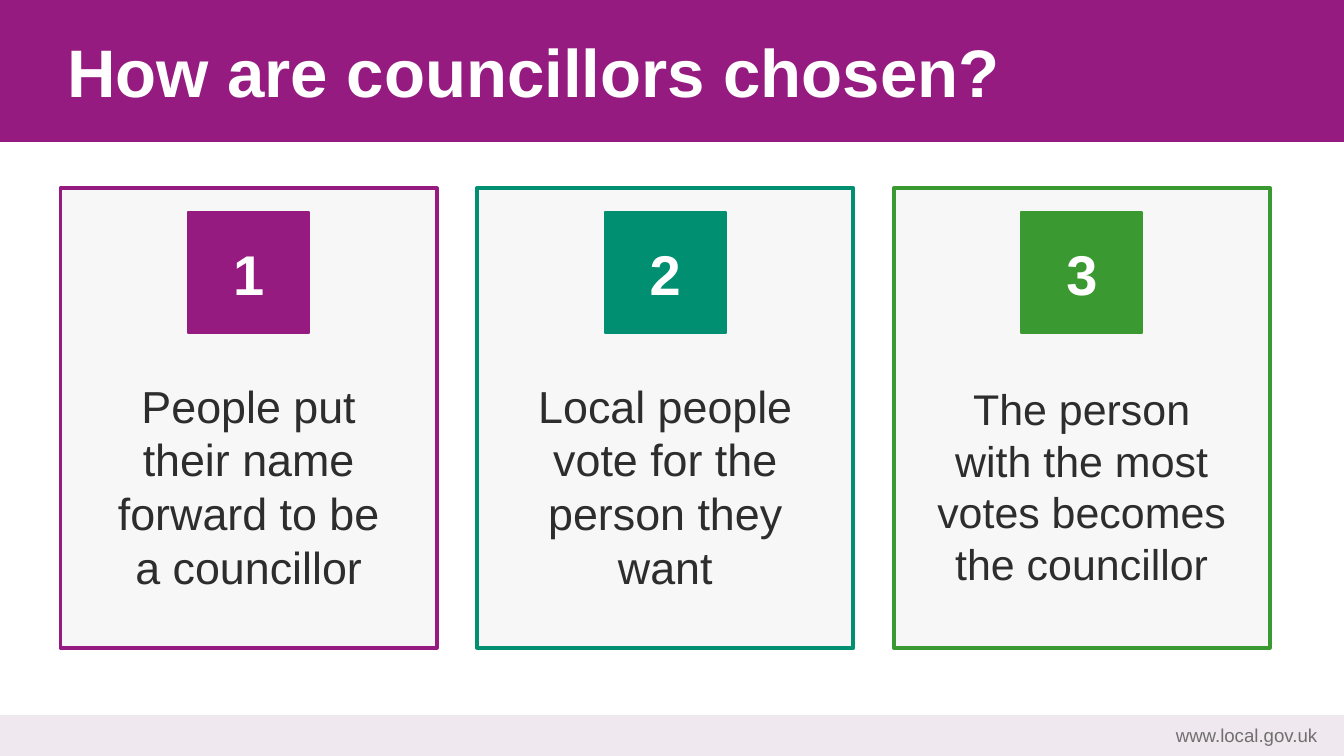
from pptx import Presentation
from pptx.dml.color import RGBColor
from pptx.enum.shapes import MSO_SHAPE
from pptx.enum.text import MSO_ANCHOR, PP_ALIGN
from pptx.util import Inches, Pt

RECTANGLE = MSO_SHAPE.RECTANGLE
MIDDLE = MSO_ANCHOR.MIDDLE
LEFT, CENTER, RIGHT = PP_ALIGN.LEFT, PP_ALIGN.CENTER, PP_ALIGN.RIGHT

FONT = "Arial"
COLORS = {
    "purple": "951B81",
    "teal": "008F70",
    "green": "3A9930",
    "card": "F7F7F7",
    "footer": "F0E8EF",
    "white": "FFFFFF",
    "body": "2D2D2D",
    "muted": "706F6F",
}

# Accent colour, text and text size of each step
STEPS = [
    ("purple", "People put their name forward to be a councillor", 24),
    ("teal", "Local people vote for the person they want", 24),
    ("green", "The person with the most votes becomes the councillor", 23),
]
CARD_LEFT, CARD_TOP, CARD_WIDTH, CARD_HEIGHT = 0.45, 1.4, 2.8, 3.42
CARD_GAP = 0.3
BADGE_TOP, BADGE_SIZE = 1.58, 0.9
TEXT_TOP, TEXT_HEIGHT, TEXT_MARGIN = 2.65, 1.93, 0.2


def color(name):
    return RGBColor.from_string(COLORS[name])


class SlideBuilder:
    """Draws styled elements on one slide; boxes are (left, top, width, height) in inches."""

    def __init__(self, slide):
        self.slide = slide

    def rectangle(self, box, fill, line=None, line_width=1):
        shape = self.slide.shapes.add_shape(RECTANGLE, *map(Inches, box))
        shape.shadow.inherit = False
        shape.fill.solid()
        shape.fill.fore_color.rgb = color(fill)
        shape.line.color.rgb = color(line or fill)
        shape.line.width = Pt(line_width)

    def text(self, box, text, size, text_color, align=LEFT, bold=False, insets=(0, 0)):
        """Add a text box; insets are the side and the top/bottom margins."""
        frame = self.slide.shapes.add_textbox(*map(Inches, box)).text_frame
        frame.word_wrap = True
        frame.vertical_anchor = MIDDLE
        frame.margin_left = frame.margin_right = Inches(insets[0])
        frame.margin_top = frame.margin_bottom = Inches(insets[1])
        paragraph = frame.paragraphs[0]
        paragraph.alignment = align
        run = paragraph.add_run()
        run.text = text
        run.font.name = FONT
        run.font.size = Pt(size)
        run.font.bold = bold
        run.font.color.rgb = color(text_color)

    def step_card(self, left, number, accent, text, size):
        self.rectangle((left, CARD_TOP, CARD_WIDTH, CARD_HEIGHT), "card", accent, 2)
        badge_left = left + (CARD_WIDTH - BADGE_SIZE) / 2
        badge = (badge_left, BADGE_TOP, BADGE_SIZE, BADGE_SIZE)
        self.rectangle(badge, accent)
        self.text(badge, str(number), 30, "white", CENTER, bold=True)
        text_box = (left + TEXT_MARGIN, TEXT_TOP, CARD_WIDTH - 2 * TEXT_MARGIN, TEXT_HEIGHT)
        self.text(text_box, text, size, "body", CENTER, insets=(0.1, 0.05))


def main():
    presentation = Presentation()
    presentation.slide_width = Inches(10)
    presentation.slide_height = Inches(10 * 9 / 16)
    builder = SlideBuilder(presentation.slides.add_slide(presentation.slide_layouts[6]))

    builder.rectangle((0, 0, 10, 1.05), "purple")
    builder.text((0.5, 0.1, 9, 0.85), "How are councillors chosen?", 36, "white", bold=True)

    for index, step in enumerate(STEPS):
        builder.step_card(CARD_LEFT + index * (CARD_WIDTH + CARD_GAP), index + 1, *step)

    builder.rectangle((0, 5.33, 10, 0.3), "footer")
    builder.text((7.5, 5.33, 2.3, 0.28), "www.local.gov.uk", 10, "muted", RIGHT)

    presentation.save("out.pptx")


if __name__ == "__main__":
    main()
